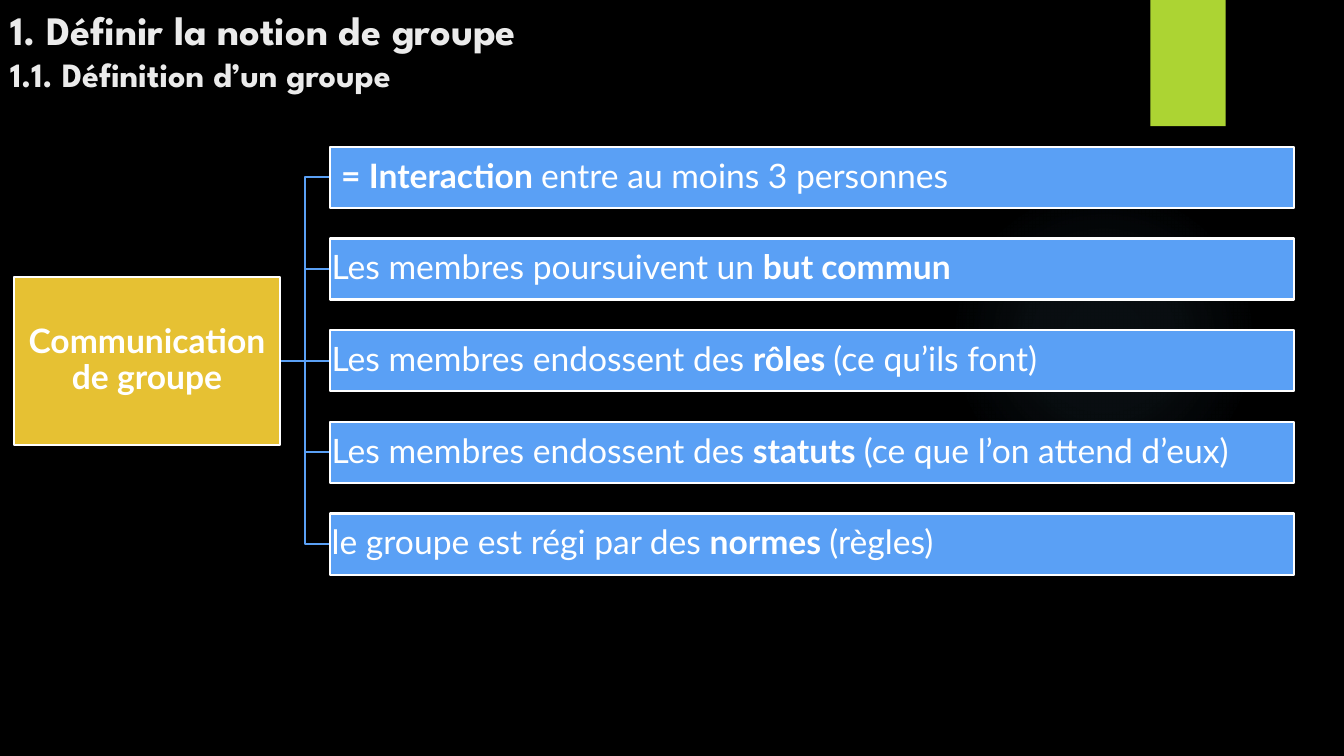
import pptx
import pptx.util
import pptx.dml.color
import pptx.enum.shapes
import pptx.enum.text
import pptx.oxml
import pptx.oxml.ns

TITLE_LINES = [("1. Définir la notion de groupe", 28.8), ("1.1. Définition d’un groupe", 24.3)]
ROOT_RUNS = [("Communication de groupe", True)]
FEATURES = [
    [("= Interaction ", True), ("entre au moins 3 personnes", False)],
    [("Les membres poursuivent un ", False), ("but commun", True)],
    [("Les membres endossent des ", False), ("rôles ", True), ("(ce qu’ils font)", False)],
    [("Les membres endossent des ", False), ("statuts ", True), ("(ce que l’on attend d’eux)", False)],
    [("le groupe est régi par des ", False), ("normes ", True), ("(règles)", False)],
]
COLORS = {
    "background": "000000",
    "title": "EBEBEB",
    "white": "FFFFFF",
    "accent": "ACD433",
    "root": "E6C133",
    "feature": "5AA0F5",
    "glow": "7AC4F0",
}
GLOW_STOPS = [(0, 7), (36, 6), (69, 0)]

Cm = pptx.util.Cm
Pt = pptx.util.Pt
SHAPES = pptx.enum.shapes.MSO_SHAPE
ALIGN = pptx.enum.text.PP_ALIGN
ANCHOR = pptx.enum.text.MSO_ANCHOR

ROOT_LEFT, ROOT_WIDTH, ROOT_HEIGHT = 0.35, 6.71, 4.24
FEATURE_LEFT, FEATURE_TOP, FEATURE_WIDTH, FEATURE_HEIGHT = 8.31, 3.7, 24.31, 1.54
FEATURE_PITCH = 2.31
INSET = 0.05
FIRST_INSET = 0.29


def color(name):
    return pptx.dml.color.RGBColor.from_string(COLORS[name])


def add_block(slide, preset, left, top, width, height, fill):
    shape = slide.shapes.add_shape(preset, Cm(left), Cm(top), Cm(width), Cm(height))
    shape.shadow.inherit = False
    shape.fill.solid()
    shape.fill.fore_color.rgb = color(fill)
    shape.line.fill.background()
    return shape


def add_glow(slide):
    glow = add_block(slide, SHAPES.OVAL, 23.9, 4.65, 7.82, 7.82, "glow")
    stops = "".join(
        f'<a:gs pos="{position * 1000}"><a:srgbClr val="{COLORS["glow"]}">'
        f'<a:alpha val="{alpha * 1000}"/></a:srgbClr></a:gs>'
        for position, alpha in GLOW_STOPS
    )
    gradient = pptx.oxml.parse_xml(
        f'<a:gradFill {pptx.oxml.ns.nsdecls("a")}><a:gsLst>{stops}</a:gsLst>'
        '<a:path path="circle"><a:fillToRect l="50000" t="50000" r="50000" b="50000"/></a:path>'
        "</a:gradFill>"
    )
    properties = glow.element.spPr
    properties.replace(properties.find(pptx.oxml.ns.qn("a:solidFill")), gradient)


def add_title(slide):
    title = slide.shapes.title
    title.left, title.top, title.width, title.height = Cm(0), Cm(0.76), Cm(30.07), Cm(1.75)
    frame = title.text_frame
    frame.text = "\v".join(text for text, size in TITLE_LINES)
    frame.vertical_anchor = ANCHOR.BOTTOM
    frame.auto_size = pptx.enum.text.MSO_AUTO_SIZE.NONE
    paragraph = frame.paragraphs[0]
    paragraph.alignment = ALIGN.LEFT
    for run, (text, size) in zip(paragraph.runs, TITLE_LINES):
        run.font.size = Pt(size)
        run.font.name = "League Spartan"
        run.font.bold = True
        run.font.color.rgb = color("title")


def add_box(slide, left, top, width, height, fill, runs, alignment, left_inset=INSET):
    box = add_block(slide, SHAPES.RECTANGLE, left, top, width, height, fill)
    box.line.color.rgb = color("white")
    box.line.width = Pt(1.5)
    frame = box.text_frame
    frame.word_wrap = True
    frame.vertical_anchor = ANCHOR.MIDDLE
    frame.margin_left = Cm(left_inset)
    frame.margin_top = frame.margin_right = frame.margin_bottom = Cm(INSET)
    paragraph = frame.paragraphs[0]
    paragraph.alignment = alignment
    paragraph.line_spacing = 0.9
    for text, bold in runs:
        run = paragraph.add_run()
        run.text = text
        run.font.size = Pt(24)
        run.font.name = "Lato"
        run.font.bold = bold
        run.font.color.rgb = color("white")


def add_branch(slide, start_y, end_y):
    kinds = pptx.enum.shapes.MSO_CONNECTOR
    kind = kinds.STRAIGHT if abs(start_y - end_y) < 0.01 else kinds.ELBOW
    branch = slide.shapes.add_connector(
        kind, Cm(ROOT_LEFT + ROOT_WIDTH), Cm(start_y), Cm(FEATURE_LEFT), Cm(end_y)
    )
    branch.line.color.rgb = color("feature")
    branch.line.width = Pt(1.5)
    branch.element.spPr.append(pptx.oxml.parse_xml(f'<a:effectLst {pptx.oxml.ns.nsdecls("a")}/>'))


def add_diagram(slide):
    tops = [FEATURE_TOP + index * FEATURE_PITCH for index in range(len(FEATURES))]
    centers = [top + FEATURE_HEIGHT / 2 for top in tops]
    middle = (centers[0] + centers[-1]) / 2
    for center in centers:
        add_branch(slide, middle, center)
    add_box(slide, ROOT_LEFT, middle - ROOT_HEIGHT / 2, ROOT_WIDTH, ROOT_HEIGHT,
            "root", ROOT_RUNS, ALIGN.CENTER)
    for index, (top, runs) in enumerate(zip(tops, FEATURES)):
        add_box(slide, FEATURE_LEFT, top, FEATURE_WIDTH, FEATURE_HEIGHT, "feature", runs,
                ALIGN.LEFT, INSET if index else FIRST_INSET)


def main():
    presentation = pptx.Presentation()
    presentation.slide_width, presentation.slide_height = Cm(33.87), Cm(19.05)
    slide = presentation.slides.add_slide(presentation.slide_layouts.get_by_name("Title Only"))
    slide.background.fill.solid()
    slide.background.fill.fore_color.rgb = color("background")
    add_glow(slide)
    add_block(slide, SHAPES.RECTANGLE, 28.99, 0, 1.9, 3.18, "accent")
    add_title(slide)
    add_diagram(slide)
    presentation.save("out.pptx")


if __name__ == "__main__":
    main()
